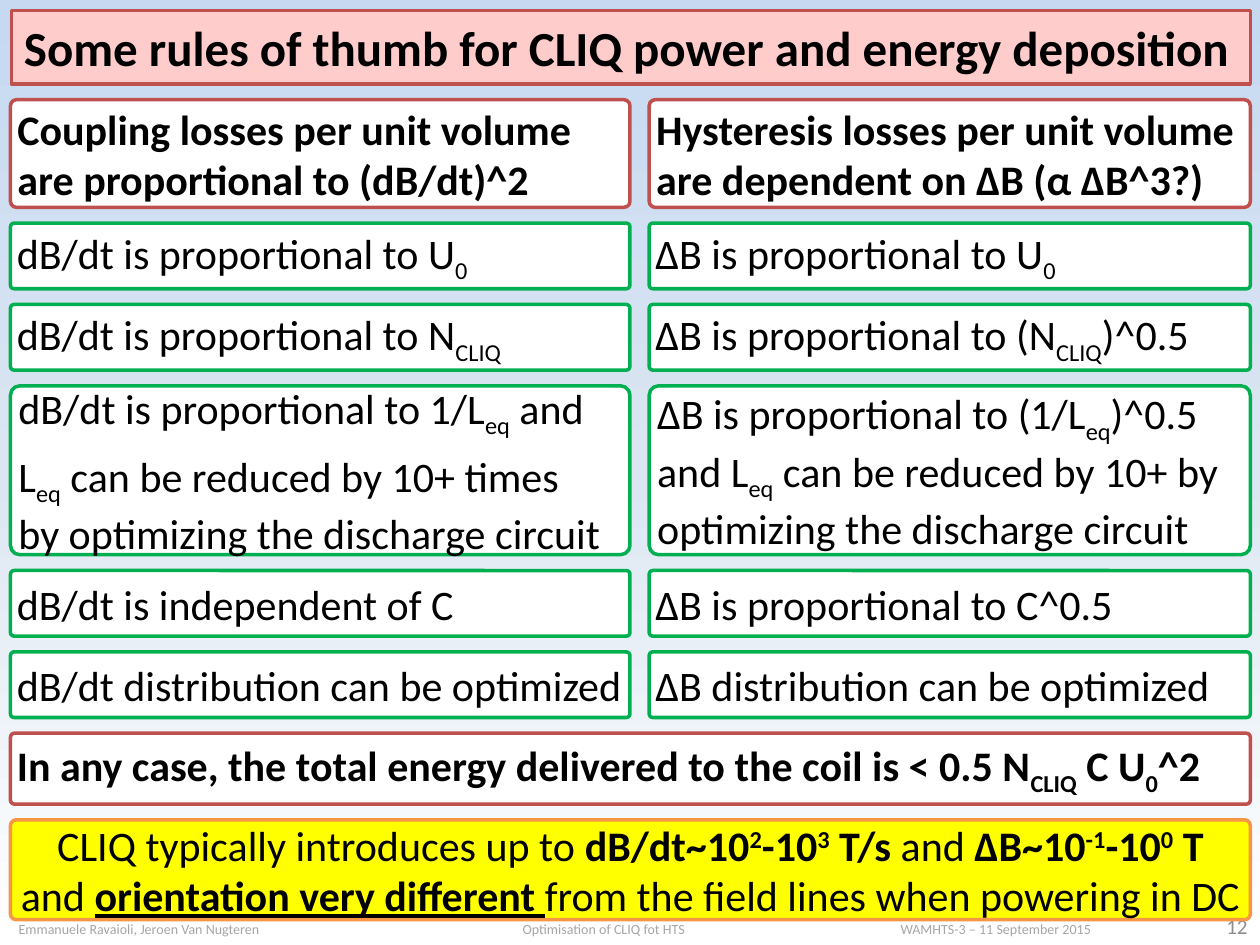
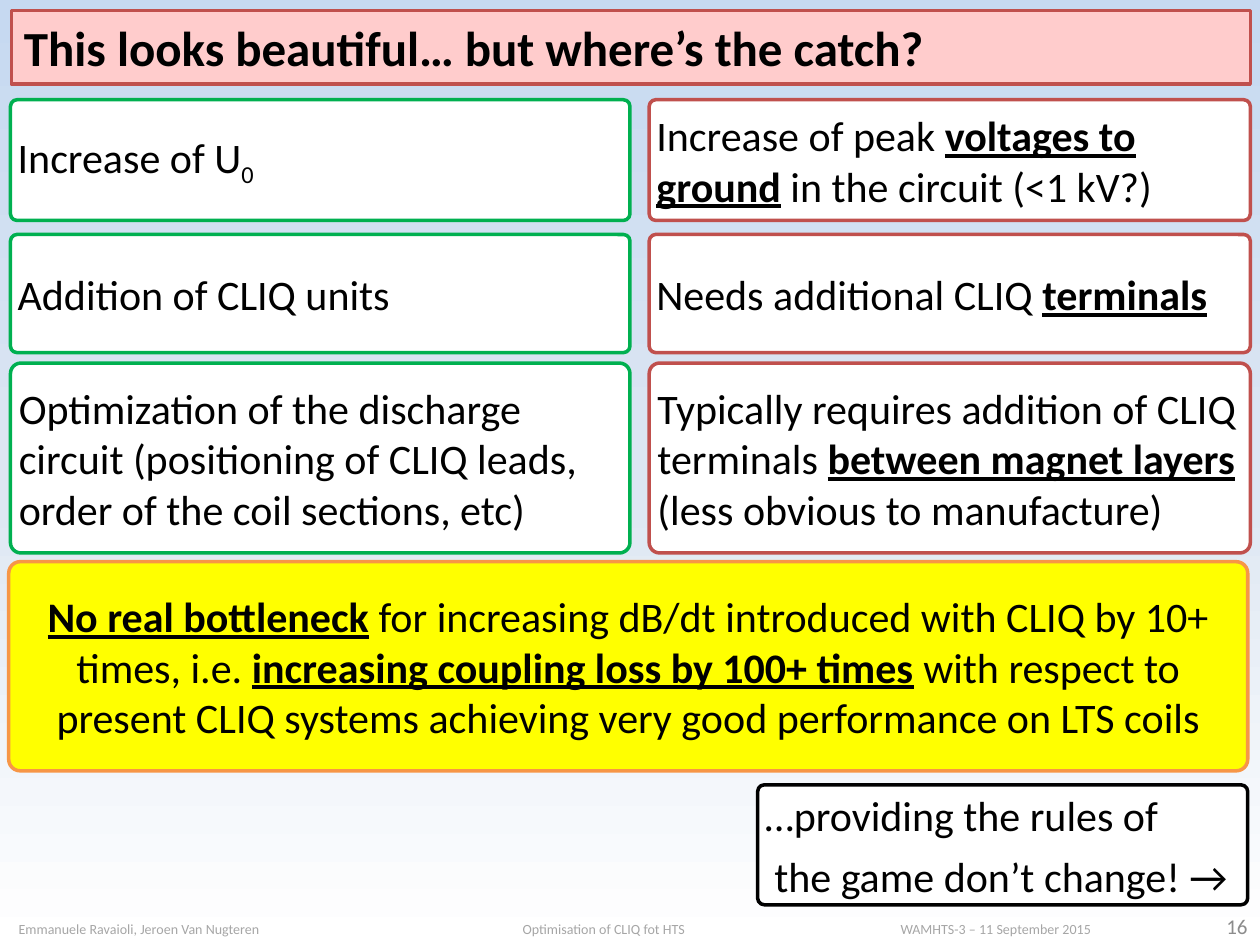
import copy

import pptx
import pptx.dml.color
import pptx.enum.shapes
import pptx.enum.text
import pptx.oxml
import pptx.oxml.ns
import pptx.util

FONT = "Calibri"
BLACK, WHITE = "000000", "FFFFFF"
RED, GREEN, ORANGE = "C0504D", "00B050", "F79646"
PINK, YELLOW = "FFCCCC", "FFFF00"
BACKGROUND_STOPS = [(0, "C6D9F1"), (0.5, "DCE6F2"), (1, "FFFFFF")]

COLUMNS = [(6, 354), (371, 343.5)]
WIDE = [(6, 708.5)]
NOTE_PLACE = [(433, 280)]
FIRST_ROW_TOP = 57

BOX_STYLES = {
    "rule": {"fill": WHITE, "line": GREEN},
    "heading": {"fill": WHITE, "line": RED, "bold": True},
    "catch": {"fill": WHITE, "line": RED},
    "conclusion": {"fill": YELLOW, "line": ORANGE, "align": "CENTER", "inset": 0, "space_after": 0},
    "note": {"fill": WHITE, "line": BLACK},
}

FOOTER = "Emmanuele Ravaioli, Jeroen Van Nugteren\tOptimisation of CLIQ fot HTS\tWAMHTS-3 – 11 September 2015"
FOOTER_TABS = [288, 504]

SLIDES = [
    {
        "title": "Some rules of thumb for CLIQ power and energy deposition",
        "number": "12",
        "rows": [
            (61.5, 9, COLUMNS, [
                ("heading", "Coupling losses per unit volume are proportional to (dB/dt)^2"),
                ("heading", "Hysteresis losses per unit volume are dependent on ΔB (α ΔB^3?)"),
            ]),
            (37.5, 9, COLUMNS, [
                ("rule", "dB/dt is proportional to U{sub|0}"),
                ("rule", "ΔB is proportional to U{sub|0}"),
            ]),
            (37.5, 9, COLUMNS, [
                ("rule", "dB/dt is proportional to N{sub|CLIQ}"),
                ("rule", "ΔB is proportional to (N{sub|CLIQ})^0.5"),
            ]),
            (96.5, 9, COLUMNS, [
                ("rule", "dB/dt is proportional to 1/L{sub|eq} and\n"
                         "L{sub|eq} can be reduced by 10+ times{break|}by optimizing the discharge circuit"),
                ("rule", "ΔB is proportional to (1/L{sub|eq})^0.5 and L{sub|eq} can be reduced by 10+ "
                         "by optimizing the discharge circuit"),
            ]),
            (37.5, 9, COLUMNS, [
                ("rule", "dB/dt is independent of C"),
                ("rule", "ΔB is proportional to C^0.5"),
            ]),
            (37.5, 9, COLUMNS, [
                ("rule", "dB/dt distribution can be optimized"),
                ("rule", "ΔB distribution can be optimized"),
            ]),
            (40.5, 9, WIDE, [
                ("heading", "In any case, the total energy delivered to the coil is < 0.5 N{sub|CLIQ} C U{sub|0}^2"),
            ]),
            (57, 0, WIDE, [
                ("conclusion", "CLIQ typically introduces up to {bold|dB/dt~10}{bold sup|2}{bold|-10}{bold sup|3}"
                               "{bold| T/s} and {bold|ΔB~10}{bold sup|-1}{bold|-10}{bold sup|0}{bold| T}\n"
                               "and {bold underline|orientation very different }"
                               "from the field lines when powering in DC"),
            ]),
        ],
    },
    {
        "title": "This looks beautiful… but where’s the catch?",
        "number": "16",
        "rows": [
            (69, 8, COLUMNS, [
                ("rule", "Increase of U{sub|0}"),
                ("catch", "Increase of peak {bold underline|voltages to ground} in the circuit (<1 kV?)"),
            ]),
            (67.5, 6, COLUMNS, [
                ("rule", "Addition of CLIQ units"),
                ("catch", "Needs additional CLIQ {bold underline|terminals}"),
            ]),
            (108.5, 5, COLUMNS, [
                ("rule", "Optimization of the discharge circuit (positioning of CLIQ leads, "
                         "order of the coil sections, etc)"),
                ("catch", "Typically requires addition of CLIQ terminals "
                          "{bold underline|between magnet layers} (less obvious to manufacture)"),
            ]),
            (119.5, 8, [(5, 708)], [
                ("conclusion", "{bold underline|No real bottleneck} for increasing dB/dt introduced with CLIQ "
                               "by 10+ times, i.e. {bold underline|increasing coupling loss by 100+ times} "
                               "with respect to present CLIQ systems achieving very good performance on LTS coils"),
            ]),
            (68.5, 0, NOTE_PLACE, [
                ("note", "…providing the rules of\n the game don’t change! →"),
            ]),
        ],
    },
]


def color(value):
    return pptx.dml.color.RGBColor.from_string(value)


def points(*values):
    return [pptx.util.Pt(value) for value in values]


def write(shape, text, size=24, ink=BLACK, bold=False, align="LEFT", inset=7.2, space_after=0):
    frame = shape.text_frame
    frame.word_wrap = True
    frame.auto_size = pptx.enum.text.MSO_AUTO_SIZE.NONE
    frame.vertical_anchor = pptx.enum.text.MSO_ANCHOR.MIDDLE
    frame.margin_left = frame.margin_right = pptx.util.Pt(inset)
    frame.margin_top = frame.margin_bottom = pptx.util.Pt(3.6)
    for index, line in enumerate(text.split("\n")):
        paragraph = frame.add_paragraph() if index else frame.paragraphs[0]
        paragraph.alignment = getattr(pptx.enum.text.PP_ALIGN, align)
        paragraph.space_after = pptx.util.Pt(space_after)
        for chunk in filter(None, line.replace("}", "{").split("{")):
            styles, _, words = chunk.rpartition("|")
            if styles == "break":
                paragraph.add_line_break()
                continue
            run = paragraph.add_run()
            run.text = words
            run.font.name = FONT
            run.font.size = pptx.util.Pt(size)
            run.font.color.rgb = color(ink)
            run.font.bold = bold or "bold" in styles
            run.font.underline = "underline" in styles
            for style, baseline in (("sub", "-25000"), ("sup", "30000")):
                if style in styles.split():
                    run._r.get_or_add_rPr().set("baseline", baseline)


def paint(shape, fill, line):
    shape.shadow.inherit = False
    shape.fill.solid()
    shape.fill.fore_color.rgb = color(fill)
    shape.line.color.rgb = color(line)
    shape.line.width = pptx.util.Pt(2)


def set_background(master):
    fill = master.background.fill
    fill.gradient()
    fill.gradient_angle = 270
    stop_list = next(master.element.iter(pptx.oxml.ns.qn("a:gsLst")))
    stop_list.append(copy.deepcopy(stop_list[-1]))
    for stop, (position, value) in zip(fill.gradient_stops, BACKGROUND_STOPS):
        stop.position = position
        stop.color.rgb = color(value)


def add_title(slide, text):
    title = slide.shapes.title
    title.left, title.top, title.width, title.height = points(6.5, 6, 708, 42)
    paint(title, PINK, RED)
    write(title, text, size=28, bold=True)


def add_footer(slide, number):
    number_box = slide.shapes.add_textbox(*points(677.5, 519, 42.5, 20))
    write(number_box, number, size=12, ink="8C8C8C", align="RIGHT")
    footer_box = slide.shapes.add_textbox(*points(3.5, 525, 708, 12))
    write(footer_box, FOOTER, size=8, ink="A6A6A6")
    properties = footer_box.text_frame.paragraphs[0]._p.get_or_add_pPr()
    tab_list = pptx.oxml.parse_xml(f"<a:tabLst {pptx.oxml.ns.nsdecls('a')}/>")
    for position in FOOTER_TABS:
        tab = tab_list.makeelement(pptx.oxml.ns.qn("a:tab"))
        tab.set("pos", str(int(pptx.util.Pt(position))))
        tab.set("algn", "l")
        tab_list.append(tab)
    properties.append(tab_list)


def add_box(slide, place, text, fill, line, **text_format):
    shape = slide.shapes.add_shape(pptx.enum.shapes.MSO_SHAPE.ROUNDED_RECTANGLE, *points(*place))
    shape.adjustments[0] = 0.055
    paint(shape, fill, line)
    write(shape, text, **{"inset": 3, "space_after": 6, **text_format})


def main():
    presentation = pptx.Presentation()
    presentation.slide_width, presentation.slide_height = points(720, 540)
    set_background(presentation.slide_master)
    for content in SLIDES:
        slide = presentation.slides.add_slide(presentation.slide_layouts[5])
        add_title(slide, content["title"])
        add_footer(slide, content["number"])
        top = FIRST_ROW_TOP
        for height, gap, columns, boxes in content["rows"]:
            for (left, width), (kind, text) in zip(columns, boxes):
                add_box(slide, (left, top, width, height), text, **BOX_STYLES[kind])
            top += height + gap
    presentation.save("out.pptx")


if __name__ == "__main__":
    main()
